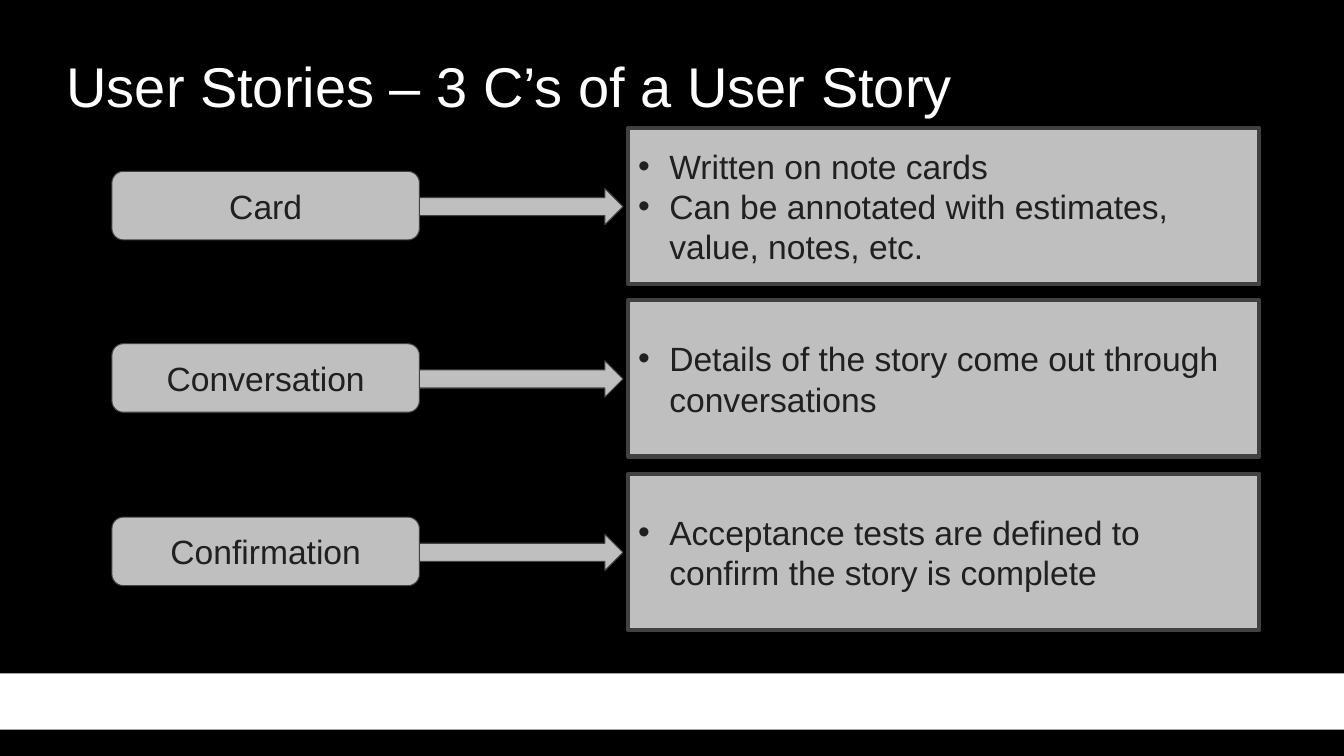
from dataclasses import dataclass
from lxml.etree import SubElement
from pptx import Presentation
from pptx.dml.color import RGBColor
from pptx.enum.shapes import MSO_SHAPE
from pptx.enum.text import MSO_ANCHOR, PP_ALIGN
from pptx.oxml.ns import qn
from pptx.util import Pt


@dataclass(frozen=True)
class Theme:
    back: str = "000000"
    white: str = "FFFFFF"
    panel: str = "BFBFBF"
    edge: str = "414141"
    ink: str = "202020"
    font: str = "Arial"
    head: int = 40
    body: int = 24
    thin: float = 0.75
    thick: int = 3


THEME = Theme()
ROWS = [
    ("Card", ["Written on note cards",
              "Can be annotated with estimates, value, notes, etc."]),
    ("Conversation", ["Details of the story come out through conversations"]),
    ("Confirmation", ["Acceptance tests are defined to confirm the story is complete"]),
]


def px(num):
    return num * 9144


def color(code):
    return RGBColor.from_string(code)


def write(shape, lines, size=THEME.body, ink=THEME.ink,
          align=PP_ALIGN.LEFT, pad=(10, 5), hang=0):
    frame = shape.text_frame
    frame.word_wrap = True
    frame.vertical_anchor = MSO_ANCHOR.MIDDLE
    frame.margin_left = frame.margin_right = px(pad[0])
    frame.margin_top = frame.margin_bottom = px(pad[1])
    for i, line in enumerate(lines):
        para = frame.add_paragraph() if i else frame.paragraphs[0]
        para.alignment = align
        if hang:
            props = para._p.get_or_add_pPr()
            props.set("marL", str(px(hang)))
            props.set("indent", str(-px(hang)))
            SubElement(props, qn("a:buFont"), typeface=THEME.font)
            SubElement(props, qn("a:buChar"), char="•")
        run = para.add_run()
        run.text = line
        run.font.name = THEME.font
        run.font.size = Pt(size)
        run.font.color.rgb = color(ink)


def block(slide, kind, box, fill=THEME.panel, line=THEME.thin):
    shape = slide.shapes.add_shape(kind, *map(px, box))
    shape.shadow.inherit = False
    shape.fill.solid()
    shape.fill.fore_color.rgb = color(fill)
    if line:
        shape.line.color.rgb = color(THEME.edge)
        shape.line.width = Pt(line)
    else:
        shape.line.fill.background()
    return shape


def title(slide, box, text):
    shape = slide.shapes.add_textbox(*map(px, box))
    write(shape, [text], size=THEME.head, ink=THEME.white, pad=(13, 7))


def row(slide, box, name, notes):
    left, top, width, height = box
    block(slide, MSO_SHAPE.RIGHT_ARROW, (left + 300, top + 60, 207, 36))
    label = block(slide, MSO_SHAPE.ROUNDED_RECTANGLE, (left, top + 43, 305, 68))
    write(label, [name], align=PP_ALIGN.CENTER)
    panel = block(slide, MSO_SHAPE.RECTANGLE,
                  (left + 512, top, width - 512, height), line=THEME.thick)
    write(panel, notes, hang=31)


def main():
    deck = Presentation()
    deck.slide_width, deck.slide_height = px(1333), px(750)
    slide = deck.slides.add_slide(deck.slide_layouts[6])
    slide.background.fill.solid()
    slide.background.fill.fore_color.rgb = color(THEME.back)
    block(slide, MSO_SHAPE.RECTANGLE, (0, 668, 1333, 56), fill=THEME.white, line=0)
    title(slide, (53, 43, 1278, 83), "User Stories – 3 C’s of a User Story")
    for i, (name, notes) in enumerate(ROWS):
        row(slide, (111, 127 + i * 343 // 2, 1138, 155), name, notes)
    deck.save("out.pptx")


if __name__ == "__main__":
    main()
